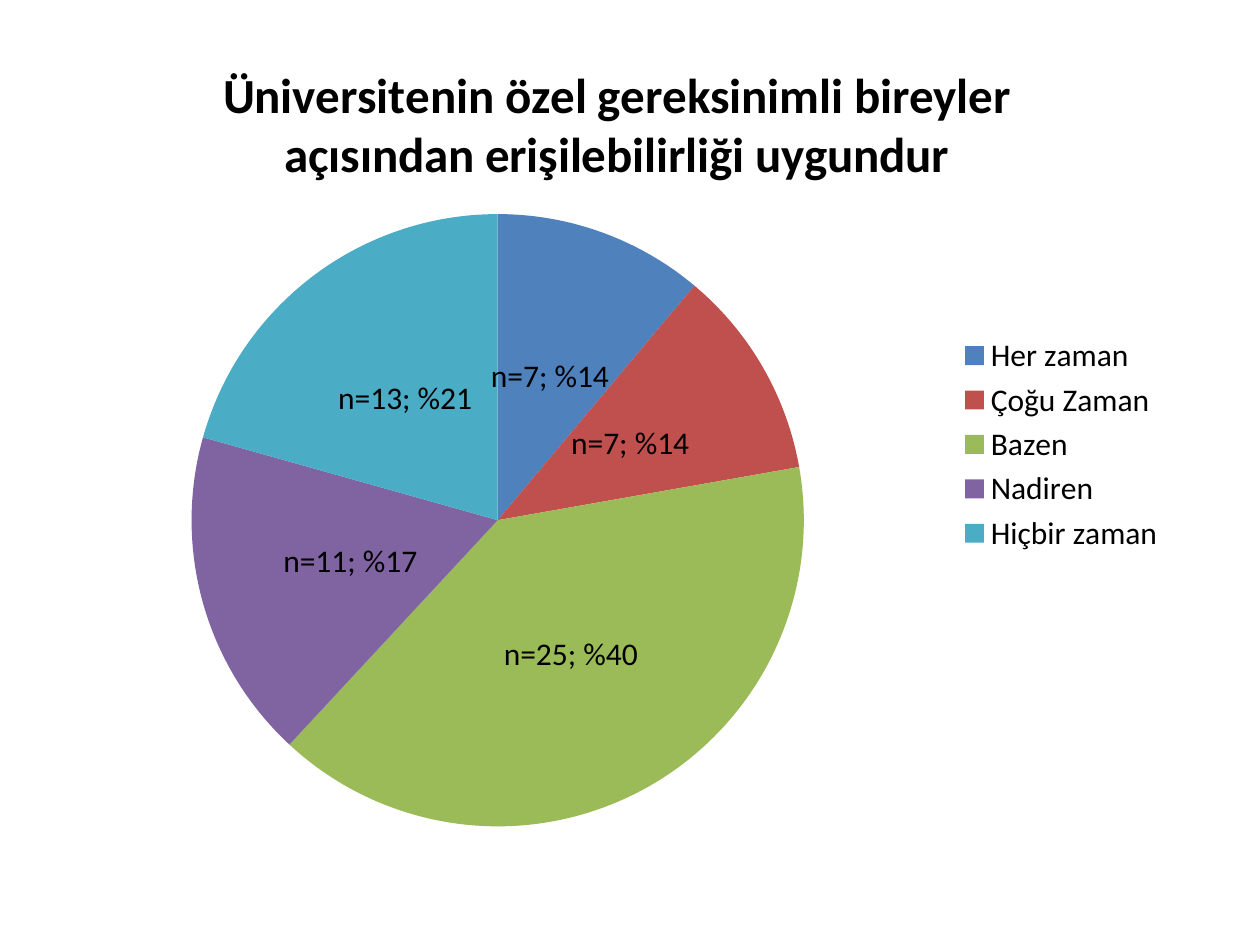
from lxml.etree import SubElement
from pptx import Presentation
from pptx.chart.data import CategoryChartData
from pptx.dml.color import RGBColor
from pptx.enum.chart import XL_CHART_TYPE as ChartType
from pptx.enum.chart import XL_LABEL_POSITION as LabelPosition
from pptx.enum.chart import XL_LEGEND_POSITION as LegendPosition
from pptx.oxml.ns import qn
from pptx.util import Cm, Pt

FONT = "Calibri"
COLORS = {
    "text": "000000",
    "Her zaman": "4F81BD",
    "Çoğu Zaman": "C0504D",
    "Bazen": "9BBB59",
    "Nadiren": "8064A2",
    "Hiçbir zaman": "4BACC6",
}
TITLE = "Üniversitenin özel gereksinimli bireyler açısından erişilebilirliği uygundur"
# answer, count, percentage shown in its label
ANSWERS = [
    ("Her zaman", 7, 14),
    ("Çoğu Zaman", 7, 14),
    ("Bazen", 25, 40),
    ("Nadiren", 11, 17),
    ("Hiçbir zaman", 13, 21),
]
# fractions of the chart's size
TITLE_SPOT = {"xMode": "edge", "yMode": "edge", "x": 0.15, "y": 0.01}
PIE_BOX = {"layoutTarget": "inner", "xMode": "edge", "yMode": "edge",
           "x": 0.13, "y": 0.21, "w": 0.54, "h": 0.77}


def style_font(font, size, bold=False):
    font.name = FONT
    font.size = Pt(size)
    font.bold = bold
    font.color.rgb = RGBColor.from_string(COLORS["text"])


def add_run(text_frame, text, size, bold=False):
    run = text_frame.paragraphs[0].add_run()
    run.text = text
    style_font(run.font, size, bold)


def set_layout(element, settings, index):
    """Give a chart part a manual layout, as its child number index."""
    layout = element.find(qn("c:layout"))
    if layout is None:
        layout = SubElement(element, qn("c:layout"))
        element.insert(index, layout)
    manual = SubElement(layout, qn("c:manualLayout"))
    for name, value in settings.items():
        SubElement(manual, qn(f"c:{name}")).set("val", str(value))


def add_title(chart):
    chart.has_title = True
    title = chart.chart_title
    add_run(title.text_frame, TITLE, 28, bold=True)
    title.include_in_layout = False
    set_layout(title._element, TITLE_SPOT, 1)


def add_legend(chart):
    chart.has_legend = True
    chart.legend.position = LegendPosition.RIGHT
    chart.legend.include_in_layout = False
    style_font(chart.legend.font, 18)


def style_slices(series):
    labels = series.data_labels
    labels.show_value = True
    labels.show_percentage = True
    labels.position = LabelPosition.CENTER
    style_font(labels.font, 18)

    for index, (answer, count, percent) in enumerate(ANSWERS):
        point = series.points[index]
        point.format.fill.solid()
        point.format.fill.fore_color.rgb = RGBColor.from_string(COLORS[answer])
        label = point.data_label
        add_run(label.text_frame, f"n={count}; %{percent}", 18)
        label.position = LabelPosition.CENTER
    for flag in labels._element.iter(qn("c:showPercent")):
        flag.set("val", "1")


def add_answer_pie(slide, left, top, width, height):
    data = CategoryChartData()
    data.categories = [answer for answer, _, _ in ANSWERS]
    data.add_series(TITLE, [count for _, count, _ in ANSWERS])
    chart = slide.shapes.add_chart(
        ChartType.PIE, left, top, width, height, data
    ).chart
    style_font(chart.font, 18)
    add_title(chart)
    add_legend(chart)
    plot = chart.plots[0]
    plot.vary_by_categories = True
    set_layout(plot._element.getparent(), PIE_BOX, 0)
    style_slices(plot.series[0])


def main():
    presentation = Presentation()
    presentation.slide_width = Cm(25.4)
    presentation.slide_height = Cm(19.05)
    slide = presentation.slides.add_slide(presentation.slide_layouts[6])
    add_answer_pie(slide, Cm(0.89), Cm(0.91), Cm(22.86), Cm(16.1))
    presentation.save("out.pptx")


if __name__ == "__main__":
    main()
